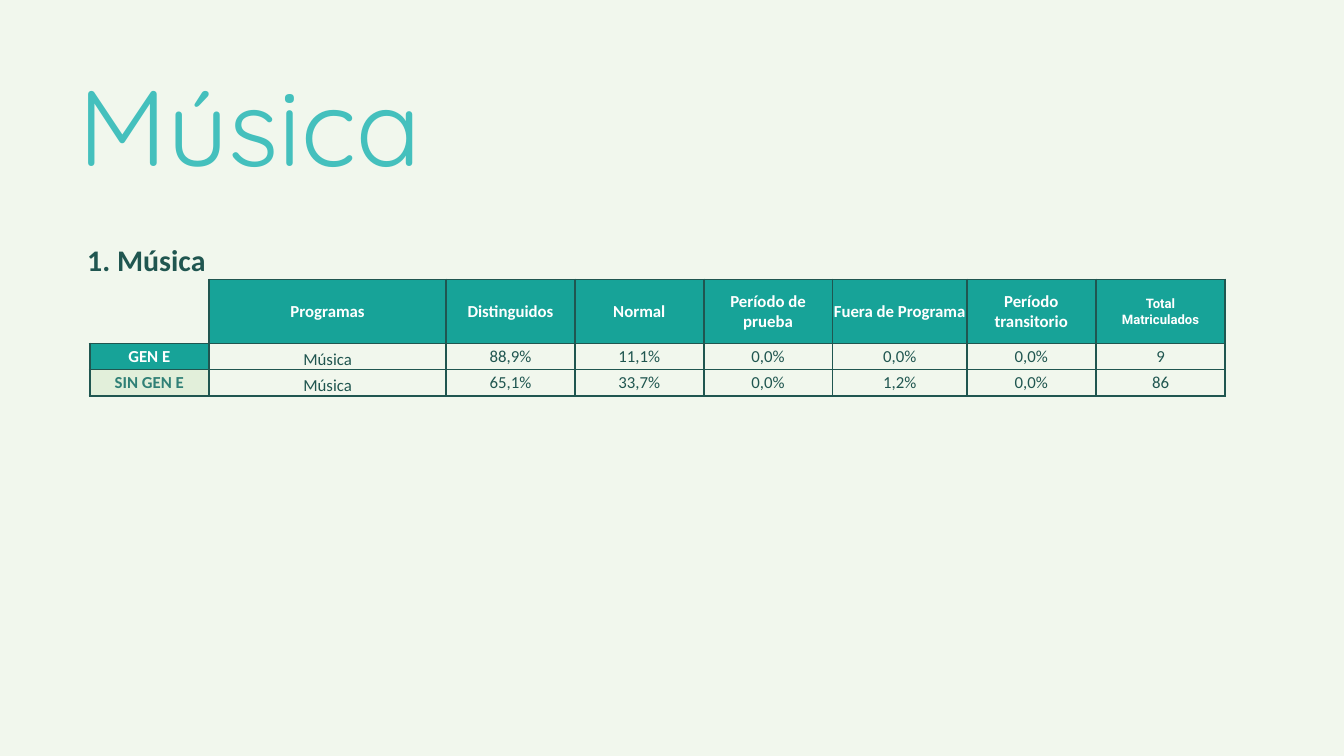
from lxml import etree
from pptx import Presentation
from pptx.dml.color import RGBColor
from pptx.enum import text
from pptx.oxml import ns
from pptx.util import Pt

CREAM = RGBColor(0xF1, 0xF7, 0xED)
AQUA = RGBColor(0x44, 0xC0, 0xBD)
PINE = RGBColor(0x20, 0x56, 0x50)
TEAL = RGBColor(0x17, 0xA3, 0x98)
SAGE = RGBColor(0x30, 0x80, 0x76)
MINT = RGBColor(0xE2, 0xEF, 0xDA)
WHITE = RGBColor(0xFF, 0xFF, 0xFF)

TITLE = "Música"
HEADING = "1. Música"
HEADERS = ["Programas", "Distinguidos", "Normal", "Período de prueba",
           "Fuera de Programa", "Período transitorio", "Total\vMatriculados"]
GROUPS = [
    ("GEN E", TEAL, WHITE,
     ["Música", "88,9%", "11,1%", "0,0%", "0,0%", "0,0%", "9"]),
    ("SIN GEN E", MINT, SAGE,
     ["Música", "65,1%", "33,7%", "0,0%", "1,2%", "0,0%", "86"]),
]
COLUMN_WIDTHS = [128, 254, 138, 138, 138, 144, 138, 139]
ROW_HEIGHTS = [24.5, 24.5, 28, 28]
TABLE_LEFT, TABLE_TOP = 96, 299.5


def write(frame, wording, size=18, font="Calibri", color=PINE, bold=False,
          align=text.PP_ALIGN.LEFT, spacing=None):
    frame.word_wrap = True
    paragraph = frame.paragraphs[0]
    paragraph.text = wording
    paragraph.alignment = align
    if spacing:
        paragraph.line_spacing = Pt(spacing)
    for run in paragraph.runs:
        run.font.size = Pt(size)
        run.font.name = font
        run.font.bold = bold
        run.font.color.rgb = color


def add_text(slide, left, top, width, height, wording, **style):
    frame = slide.shapes.add_textbox(Pt(left), Pt(top), Pt(width), Pt(height)).text_frame
    frame.margin_left = frame.margin_right = frame.margin_top = frame.margin_bottom = 0
    write(frame, wording, **style)


def set_borders(cell, sides):
    properties = cell._tc.get_or_add_tcPr()
    for index, side in enumerate("LRTB"):
        line = etree.Element(ns.qn(f"a:ln{side}"), w=str(Pt(2.25)))
        if side in sides:
            fill = etree.SubElement(line, ns.qn("a:solidFill"))
            etree.SubElement(fill, ns.qn("a:srgbClr"), val=str(PINE))
        else:
            etree.SubElement(line, ns.qn("a:noFill"))
        properties.insert(index, line)


def fill_cell(cell, wording, fill, anchor=text.MSO_ANCHOR.MIDDLE, **style):
    cell.fill.solid()
    cell.fill.fore_color.rgb = fill
    cell.vertical_anchor = anchor
    write(cell.text_frame, wording, align=text.PP_ALIGN.CENTER, **style)


def add_program_table(slide):
    table = slide.shapes.add_table(
        len(ROW_HEIGHTS), len(COLUMN_WIDTHS), Pt(TABLE_LEFT), Pt(TABLE_TOP),
        Pt(sum(COLUMN_WIDTHS)), Pt(sum(ROW_HEIGHTS))).table
    table.first_row = table.horz_banding = False
    for column, width in zip(table.columns, COLUMN_WIDTHS):
        column.width = Pt(width)
    for row, height in zip(table.rows, ROW_HEIGHTS):
        row.height = Pt(height)

    corner_sides = {0: "R", 1: "RB"}
    for row_index, row in enumerate(table.rows):
        for column_index, cell in enumerate(row.cells):
            cell.margin_left = cell.margin_right = cell.margin_top = Pt(0.75)
            cell.margin_bottom = 0
            is_corner = column_index == 0 and row_index in corner_sides
            set_borders(cell, corner_sides[row_index] if is_corner else "LRTB")
            if is_corner:
                cell.fill.background()

    for column_index, header in enumerate(HEADERS, 1):
        cell = table.cell(0, column_index)
        cell.merge(table.cell(1, column_index))
        is_total = column_index == len(HEADERS)
        fill_cell(cell, header, TEAL, color=WHITE, bold=True,
                  size=14 if is_total else 18,
                  font="Roboto" if is_total else "Calibri")

    for row_index, (group, fill, color, values) in enumerate(GROUPS, 2):
        fill_cell(table.cell(row_index, 0), group, fill, color=color, bold=True)
        for column_index, value in enumerate(values, 1):
            anchor = text.MSO_ANCHOR.BOTTOM if column_index == 1 else text.MSO_ANCHOR.MIDDLE
            fill_cell(table.cell(row_index, column_index), value, CREAM, anchor=anchor)


def main():
    deck = Presentation()
    deck.slide_width, deck.slide_height = Pt(1440), Pt(810)
    slide = deck.slides.add_slide(deck.slide_layouts[6])
    slide.background.fill.solid()
    slide.background.fill.fore_color.rgb = CREAM
    add_text(slide, 84, 63.5, 1113, 140, TITLE, size=115, font="Quicksand", color=AQUA)
    add_text(slide, 93.5, 265, 482, 33, HEADING, size=32, bold=True, spacing=32.7)
    add_program_table(slide)
    deck.save("out.pptx")


if __name__ == "__main__":
    main()
